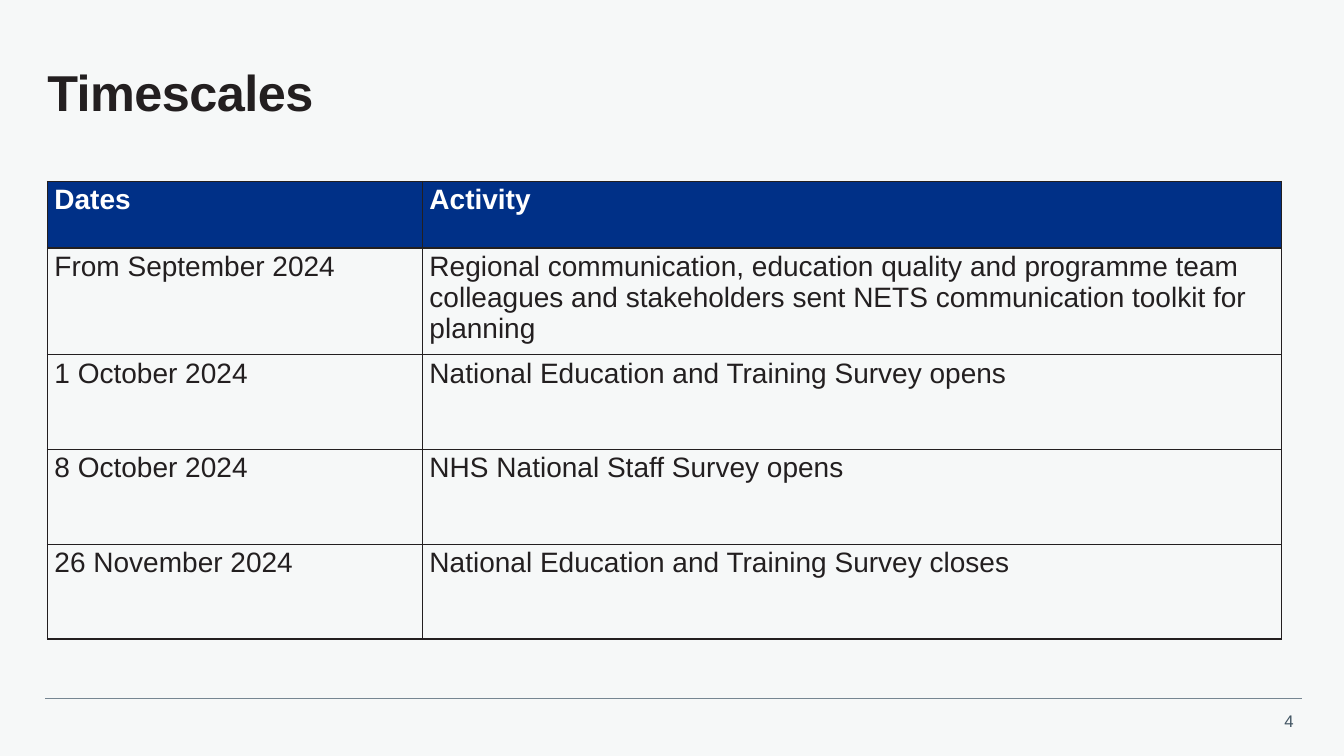
from lxml import etree
from pptx import Presentation
from pptx import util as u
from pptx.dml import color
from pptx.enum import shapes, text
from pptx.oxml import ns

PX = 9144
FONT = "Arial"
PAPER = color.RGBColor(0xF6, 0xF8, 0xF8)
INK = color.RGBColor(0x23, 0x1F, 0x20)
NAVY = color.RGBColor(0x00, 0x30, 0x87)
WHITE = color.RGBColor(0xFF, 0xFF, 0xFF)
RULE = color.RGBColor(0x76, 0x86, 0x92)
SLATE = color.RGBColor(0x42, 0x55, 0x63)

COLUMN_WIDTHS = (372, 852)
HEADER_HEIGHT, ROW_HEIGHT = 66, 94
TIMESCALES = (
    ("Dates", "Activity"),
    ("From September 2024",
     "Regional communication, education quality and programme team colleagues "
     "and stakeholders sent NETS communication toolkit for planning"),
    ("1 October 2024", "National Education and Training Survey opens"),
    ("8 October 2024", "NHS National Staff Survey opens"),
    ("26 November 2024", "National Education and Training Survey closes"),
)


def px(*lengths):
    return [u.Emu(length * PX) for length in lengths]


def add_run(paragraph, words, size, ink, bold=False):
    run = paragraph.add_run()
    run.text = words
    run.font.name = FONT
    run.font.size = u.Pt(size)
    run.font.bold = bold
    run.font.color.rgb = ink
    return run


def set_margins(target, across, down):
    target.margin_left = target.margin_right = u.Emu(across * PX)
    target.margin_top = target.margin_bottom = u.Emu(down * PX)


def fill_title(title, words):
    title.left, title.top, title.width, title.height = px(47, 47, 1247, 95)
    frame = title.text_frame
    frame.word_wrap = True
    frame.auto_size = text.MSO_AUTO_SIZE.NONE
    frame.vertical_anchor = text.MSO_ANCHOR.MIDDLE
    set_margins(frame, 0, 0)
    paragraph = frame.paragraphs[0]
    paragraph.alignment = text.PP_ALIGN.LEFT
    paragraph.line_spacing = 0.9
    run = add_run(paragraph, words, 36, INK, True)
    run._r.get_or_add_rPr().set("spc", "-40")


def add_borders(cell):
    properties = cell._tc.get_or_add_tcPr()
    for side in ("a:lnL", "a:lnR", "a:lnT", "a:lnB"):
        line = etree.SubElement(properties, ns.qn(side), w=str(u.Pt(1)))
        fill = etree.SubElement(line, ns.qn("a:solidFill"))
        etree.SubElement(fill, ns.qn("a:srgbClr"), val=str(INK))


def fill_cell(cell, words, header):
    add_borders(cell)
    if header:
        cell.fill.solid()
        cell.fill.fore_color.rgb = NAVY
    else:
        cell.fill.background()
    set_margins(cell, 7, 3)
    paragraph = cell.text_frame.paragraphs[0]
    add_run(paragraph, words, 20, WHITE if header else INK, header)


def add_timescales(slide):
    heights = [HEADER_HEIGHT] + [ROW_HEIGHT] * (len(TIMESCALES) - 1)
    frame = slide.shapes.add_table(
        len(TIMESCALES), len(COLUMN_WIDTHS),
        *px(47, 180, sum(COLUMN_WIDTHS), sum(heights)))
    table = frame.table
    table.horz_banding = False
    for column, width in zip(table.columns, px(*COLUMN_WIDTHS)):
        column.width = width
    for row, height, entries in zip(table.rows, px(*heights), TIMESCALES):
        row.height = height
        for cell, words in zip(row.cells, entries):
            fill_cell(cell, words, entries is TIMESCALES[0])


def add_rule(slide):
    rule = slide.shapes.add_connector(
        shapes.MSO_CONNECTOR.STRAIGHT, *px(45, 693, 1291, 693))
    rule.line.color.rgb = RULE
    rule.line.width = u.Pt(0.5)
    etree.SubElement(rule._element.spPr, ns.qn("a:effectLst"))


def add_page_number(slide, number):
    box = slide.shapes.add_textbox(*px(1252, 700, 41, 30))
    box.text_frame.word_wrap = True
    paragraph = box.text_frame.paragraphs[0]
    paragraph.alignment = text.PP_ALIGN.RIGHT
    add_run(paragraph, number, 12, SLATE)


def main():
    presentation = Presentation()
    presentation.slide_width, presentation.slide_height = px(1333, 750)
    slide = presentation.slides.add_slide(presentation.slide_layouts[5])
    slide.background.fill.solid()
    slide.background.fill.fore_color.rgb = PAPER
    add_rule(slide)
    add_page_number(slide, "4")
    fill_title(slide.shapes.title, "Timescales")
    add_timescales(slide)
    presentation.save("out.pptx")


if __name__ == "__main__":
    main()
